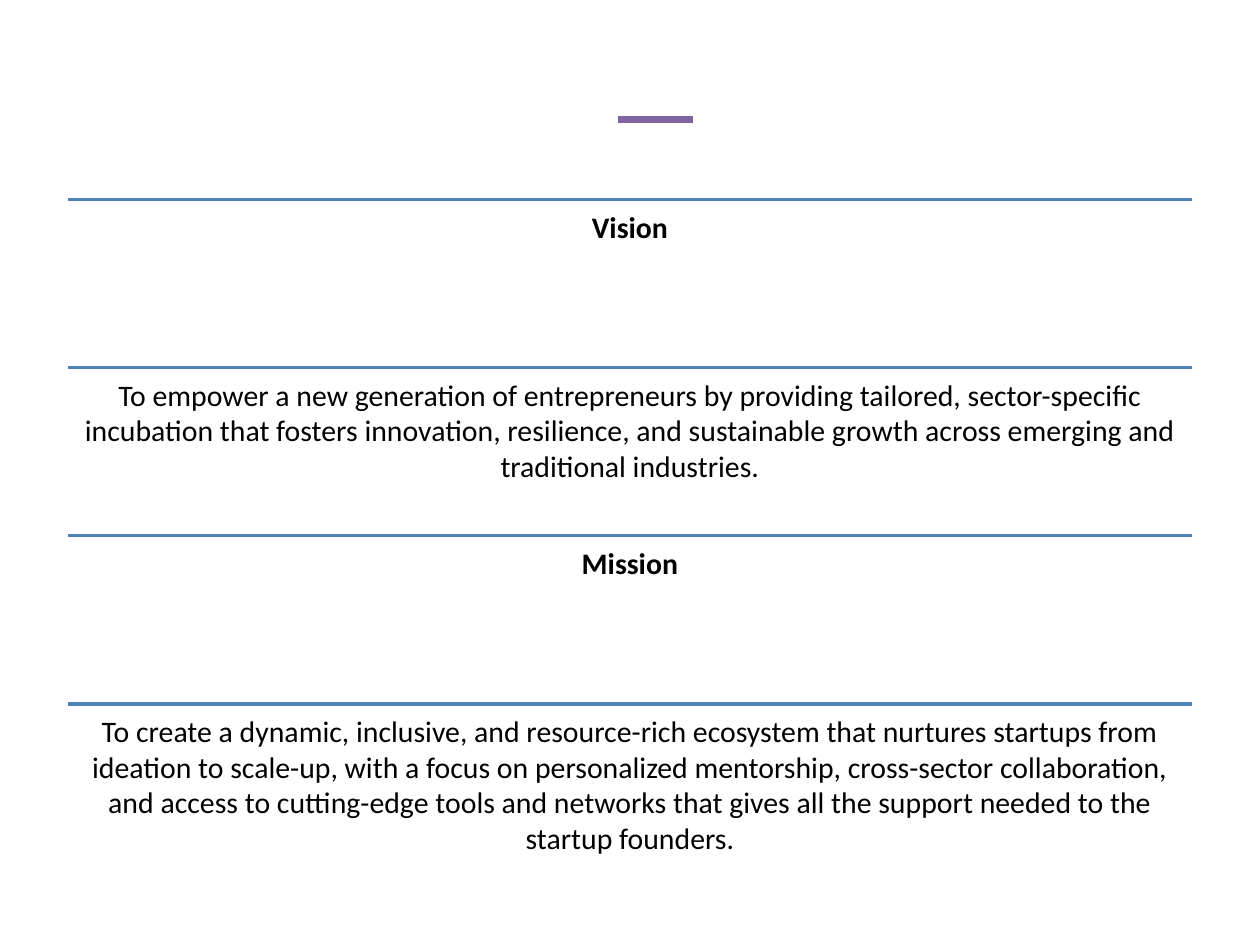
from dataclasses import dataclass

from lxml import etree
from pptx import Presentation
from pptx.dml.color import RGBColor
from pptx.enum import shapes, text
from pptx.oxml import ns
from pptx.util import Cm, Pt


@dataclass(frozen=True)
class Theme:
    accent: RGBColor = RGBColor(0x80, 0x64, 0xA2)
    divider: RGBColor = RGBColor(0x4F, 0x81, 0xBD)
    ink: RGBColor = RGBColor(0, 0, 0)
    font: str = "Calibri"
    body: Pt = Pt(17)
    accent_width: Pt = Pt(4.5)
    divider_width: Pt = Pt(2)


theme = Theme()
deck = Presentation()
deck.slide_width, deck.slide_height = Cm(25.4), Cm(19.05)
slide = deck.slides.add_slide(deck.slide_layouts[6])


def add_rule(left, right, y, color, width):
    """Draw a horizontal line without a shadow."""
    rule = slide.shapes.add_connector(
        shapes.MSO_CONNECTOR.STRAIGHT, left, y, right, y)
    rule.line.color.rgb = color
    rule.line.width = width
    properties = rule._element.find(ns.qn("p:spPr"))
    etree.SubElement(properties, ns.qn("a:effectLst"))


add_rule(Cm(12.45), Cm(13.97), Cm(2.41), theme.accent, theme.accent_width)

statements = [
    ("Vision", True),
    ("To empower a new generation of entrepreneurs by providing tailored, "
     "sector-specific incubation that fosters innovation, resilience, and "
     "sustainable growth across emerging and traditional industries.", False),
    ("Mission", True),
    ("To create a dynamic, inclusive, and resource-rich ecosystem that "
     "nurtures startups from ideation to scale-up, with a focus on "
     "personalized mentorship, cross-sector collaboration, and access to "
     "cutting-edge tools and networks that gives all the support needed to "
     "the startup founders.", False),
]
left, top = Cm(1.37), Cm(4.02)
width, row_height = Cm(22.66), Cm(3.39)
inset = Cm(0.18)

for row, (wording, is_heading) in enumerate(statements):
    y = top + row * row_height
    add_rule(left, left + width, y, theme.divider, theme.divider_width)
    statement = slide.shapes.add_textbox(left, y, width, row_height).text_frame
    statement.word_wrap = True
    statement.vertical_anchor = text.MSO_ANCHOR.TOP
    statement.margin_left = statement.margin_right = inset
    statement.margin_top = statement.margin_bottom = inset
    paragraph = statement.paragraphs[0]
    paragraph.alignment = text.PP_ALIGN.CENTER
    run = paragraph.add_run()
    run.text = wording
    run.font.name = theme.font
    run.font.size = theme.body
    run.font.bold = is_heading
    run.font.color.rgb = theme.ink

deck.save("out.pptx")
